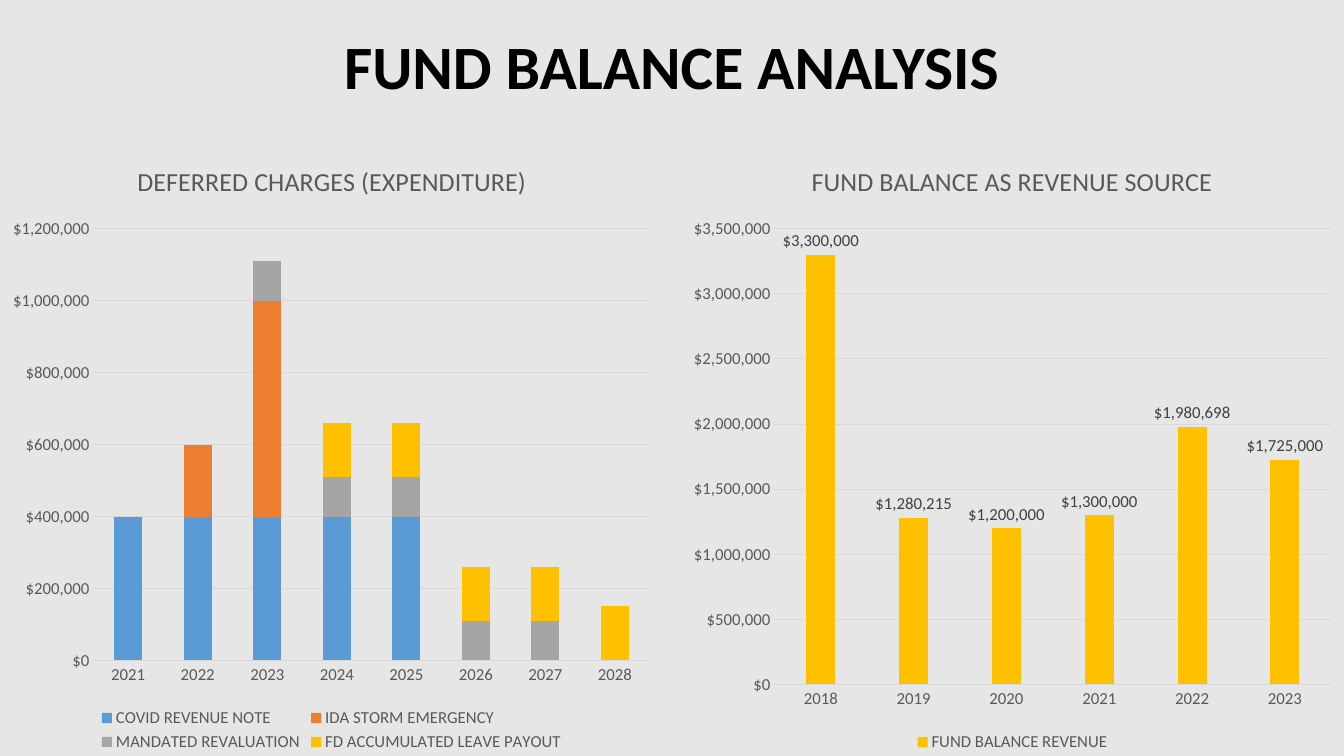
from lxml import etree
from pptx import Presentation
from pptx import util as u
from pptx.chart.data import CategoryChartData
from pptx.dml.color import RGBColor
from pptx.enum import chart as ch, text
from pptx.oxml.ns import qn

FONT = "Calibri"
MONEY = '"$"#,##0'
COLORS = {
    "background": "E7E6E6", "heading": "000000", "axis": "595959",
    "grid": "D9D9D9", "value": "404040", "blue": "5B9BD5",
    "orange": "ED7D31", "gray": "A5A5A5", "gold": "FFC000",
}
HEADING = "FUND BALANCE ANALYSIS"
NOTE, STORM, REVALUATION, LEAVE = 400000, 200000, 110000, 150000

# Layout values are fractions of the chart's width and height.
PANELS = [
    {
        "title": "DEFERRED CHARGES (EXPENDITURE)",
        "kind": ch.XL_CHART_TYPE.COLUMN_STACKED,
        "years": range(2021, 2029),
        "series": [
            ("COVID REVENUE NOTE", "blue", [NOTE] * 5 + [None] * 3),
            ("IDA STORM EMERGENCY", "orange",
             [None, STORM, 3 * STORM] + [None] * 5),
            ("MANDATED REVALUATION", "gray",
             [None] * 2 + [REVALUATION] * 5 + [None]),
            ("FD ACCUMULATED LEAVE PAYOUT", "gold", [None] * 3 + [LEAVE] * 5),
        ],
        "top": 1200000, "step": 200000, "gap": 150, "overlap": 100,
        "labels": False, "baseline": False,
        "title_at": (0.2, 0.03), "plot_at": (0.141, 0.144, 0.839, 0.701),
    },
    {
        "title": "FUND BALANCE AS REVENUE SOURCE",
        "kind": ch.XL_CHART_TYPE.COLUMN_CLUSTERED,
        "years": range(2018, 2024),
        "series": [
            ("FUND BALANCE REVENUE", "gold",
             [3300000, 1280215, 1200000, 1300000, 1980698, 1725000]),
        ],
        "top": 3500000, "step": 500000, "gap": 219, "overlap": 0,
        "labels": True, "baseline": True,
        "title_at": (0.19, 0.03), "plot_at": (0.141, 0.144, 0.84, 0.74),
    },
]

SLIDE_W, SLIDE_H = u.Cm(33.87), u.Cm(19.05)
HEADING_W, HEADING_H = u.Cm(29.21), u.Cm(3.53)
PANEL_W = u.Cm(16.71)


def rgb(name):
    return RGBColor.from_string(COLORS[name])


def style(font, size, color, bold=False):
    font.name, font.size, font.bold = FONT, u.Pt(size), bold
    font.color.rgb = rgb(color)


def place(parent, position, inner=False):
    """Give a chart part a manual layout: x, y and optionally w, h."""
    for old in parent.findall(qn("c:layout")):
        parent.remove(old)
    layout = etree.Element(qn("c:layout"))
    manual = etree.SubElement(layout, qn("c:manualLayout"))
    settings = [("layoutTarget", "inner")] if inner else []
    settings += [("xMode", "edge"), ("yMode", "edge")]
    settings += zip("xywh", position)
    for tag, value in settings:
        etree.SubElement(manual, qn("c:" + tag)).set("val", str(value))
    tx = parent.find(qn("c:tx"))
    if tx is None:
        parent.insert(0, layout)
    else:
        tx.addnext(layout)


def style_axes(chart, panel):
    years, amounts = chart.category_axis, chart.value_axis
    for axis in (years, amounts):
        axis.major_tick_mark = axis.minor_tick_mark = ch.XL_TICK_MARK.NONE
        style(axis.tick_labels.font, 12, "axis")
        axis.format.line.fill.background()
    amounts.minimum_scale, amounts.maximum_scale = 0, panel["top"]
    amounts.major_unit = panel["step"]
    amounts.tick_labels.number_format = MONEY
    amounts.tick_labels.number_format_is_linked = False
    amounts.has_major_gridlines = True
    lines = [amounts.major_gridlines.format.line]
    if panel["baseline"]:
        lines.append(years.format.line)
    for line in lines:
        line.color.rgb, line.width = rgb("grid"), u.Pt(0.75)


def add_panel(slide, panel, left):
    data = CategoryChartData(number_format=MONEY)
    data.categories = [str(year) for year in panel["years"]]
    for name, _, amounts in panel["series"]:
        data.add_series(name, amounts)
    chart = slide.shapes.add_chart(
        panel["kind"], left, HEADING_H, PANEL_W, SLIDE_H - HEADING_H, data
    ).chart
    style(chart.font, 10, "heading")

    chart.has_title = True
    title = chart.chart_title
    title.text_frame.text = panel["title"]
    style(title.text_frame.paragraphs[0].runs[0].font, 18.6, "axis")
    title.include_in_layout = False
    place(title._element, panel["title_at"])

    chart.has_legend = True
    chart.legend.position = ch.XL_LEGEND_POSITION.BOTTOM
    chart.legend.include_in_layout = False
    style(chart.legend.font, 12, "axis")

    style_axes(chart, panel)
    plot = chart.plots[0]
    plot.vary_by_categories = False
    plot.gap_width, plot.overlap = panel["gap"], panel["overlap"]
    place(plot._element.getparent(), panel["plot_at"], inner=True)
    for bars, (_, color, _) in zip(plot.series, panel["series"]):
        bars.format.fill.solid()
        bars.format.fill.fore_color.rgb = rgb(color)
        if panel["labels"]:
            labels = bars.data_labels
            labels.show_value = True
            labels.position = ch.XL_LABEL_POSITION.OUTSIDE_END
            style(labels.font, 12, "value")


def add_heading(slide):
    frame = slide.shapes.add_textbox(
        (SLIDE_W - HEADING_W) // 2, 0, HEADING_W, HEADING_H
    ).text_frame
    frame.word_wrap = True
    frame.vertical_anchor = text.MSO_ANCHOR.MIDDLE
    frame.text = HEADING
    line = frame.paragraphs[0]
    line.alignment, line.line_spacing = text.PP_ALIGN.CENTER, 0.9
    style(line.runs[0].font, 44, "heading", bold=True)


def main():
    deck = Presentation()
    deck.slide_width, deck.slide_height = SLIDE_W, SLIDE_H
    slide = deck.slides.add_slide(deck.slide_layouts[6])
    slide.background.fill.solid()
    slide.background.fill.fore_color.rgb = rgb("background")
    add_heading(slide)
    for panel, left in zip(PANELS, (0, SLIDE_W - PANEL_W)):
        add_panel(slide, panel, left)
    deck.save("out.pptx")


if __name__ == "__main__":
    main()
